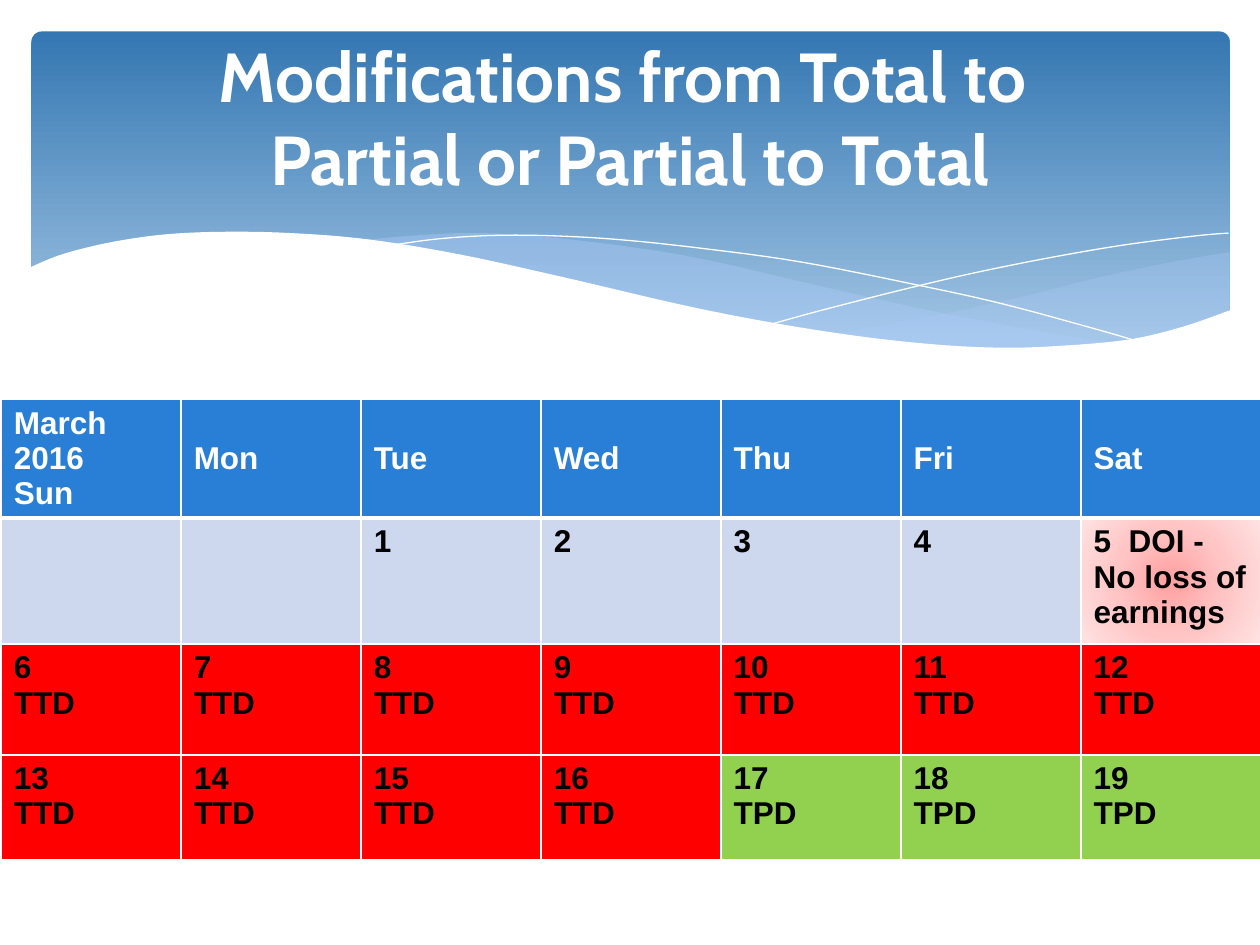
from lxml.etree import SubElement
from pptx import Presentation
from pptx.dml.color import RGBColor
from pptx.enum.shapes import MSO_SHAPE
from pptx.enum.text import MSO_ANCHOR, PP_ALIGN
from pptx.oxml import parse_xml
from pptx.oxml.ns import qn
from pptx.util import Pt

PX = 9144
DRAWING_NS = 'xmlns:a="http://schemas.openxmlformats.org/drawingml/2006/main"'
WHITE, BLACK, RED, GREEN = "FFFFFF", "000000", "FF0000", "92D050"
HEADER_BLUE, PALE_BLUE, SWELL_BLUE = "297FD5", "CDD8EF", "ACCBF9"
INJURY_GLOW = [(0, "FFA0A0"), (50, "FFC5C5"), (100, "FFE3E3")]

RIGHT_SWELL = [
    [(951, 175), (910, 182), (866, 191), (836, 198), (780, 212), (704, 228), (636, 240)],
    [(636, 240), (680, 246), (732, 251), (789, 253), (838, 250), (888, 242),
     (924, 232), (951, 222)],
]
LEFT_SWELL = [
    [(868, 248), (812, 240), (716, 222), (643, 206), (604, 197), (544, 183),
     (489, 173), (417, 164), (355, 160), (303, 162), (261, 166)],
    [(261, 166), (317, 174), (379, 186), (424, 197), (505, 215), (576, 230),
     (640, 241), (697, 249), (748, 252), (803, 253), (853, 251), (868, 248)],
]
FALLING_LINE = [(284, 170), (319, 165), (362, 162), (408, 162), (464, 165), (531, 172),
                (611, 183), (702, 201), (770, 216), (844, 236), (882, 247)]
RISING_LINE = [(588, 232), (628, 221), (695, 204), (751, 191), (811, 179), (870, 169),
               (926, 162), (950, 160)]
WHITE_WAVE = [
    [(952, 221), (915, 234), (874, 244), (825, 249), (768, 251), (701, 247), (623, 237),
     (530, 220), (422, 195), (340, 177), (267, 165), (205, 160), (152, 159), (107, 161),
     (70, 166), (42, 172), (21, 178), (4, 185), (-2, 188)],
    [(-2, 304), (952, 304)],
]


def color(hex_value):
    return RGBColor.from_string(hex_value)


def write(frame, text, size=18, font="Arial", ink=BLACK, bold=True, align=PP_ALIGN.LEFT):
    frame.word_wrap = True
    frame.text = text
    for paragraph in frame.paragraphs:
        paragraph.alignment = align
        for run in paragraph.runs:
            run.font.size = Pt(size)
            run.font.name = font
            run.font.bold = bold
            run.font.color.rgb = color(ink)


def smooth_curve(knots, steps=6):
    padded = [knots[0], *knots, knots[-1]]
    points = [knots[0]]
    for a, b, c, d in zip(padded, padded[1:], padded[2:], padded[3:]):
        for step in range(1, steps + 1):
            t = step / steps
            points.append(tuple(
                (2 * q + (r - p) * t + (2 * p - 5 * q + 4 * r - s) * t ** 2
                 + (3 * q - p - 3 * r + s) * t ** 3) / 2
                for p, q, r, s in zip(a, b, c, d)))
    return points


def add_wave(slide, left, top, edges, fill=None, opacity=100):
    points = [(round((left + x) * PX), round((top + y) * PX))
              for edge in edges for x, y in smooth_curve(edge)]
    builder = slide.shapes.build_freeform(*points[0], scale=1.0)
    builder.add_line_segments(points[1:], close=fill is not None)
    wave = builder.convert_to_shape()
    wave.shadow.inherit = False
    if fill is None:
        wave.fill.background()
        wave.line.color.rgb = color(WHITE)
        wave.line.width = Pt(0)
        return
    wave.line.fill.background()
    wave.fill.solid()
    wave.fill.fore_color.rgb = color(fill)
    if opacity < 100:
        tint = wave._element.spPr.find(qn("a:solidFill")).find(qn("a:srgbClr"))
        SubElement(tint, qn("a:alpha")).set("val", str(opacity * 1000))


def add_banner(slide, left, top, width, height):
    panel = slide.shapes.add_shape(
        MSO_SHAPE.ROUNDED_RECTANGLE, left * PX, top * PX, width * PX, height * PX)
    panel.adjustments[0] = 0.03
    panel.shadow.inherit = False
    panel.line.fill.background()
    panel.fill.gradient()
    panel.fill.gradient_angle = 270
    for stop, position, shade in zip(panel.fill.gradient_stops, (0, 0.9), ("3477B2", "A1C4E3")):
        stop.position = position
        stop.color.rgb = color(shade)
    add_wave(slide, left, top, RIGHT_SWELL, SWELL_BLUE, 29)
    add_wave(slide, left, top, LEFT_SWELL, SWELL_BLUE, 40)
    add_wave(slide, left, top, [FALLING_LINE])
    add_wave(slide, left, top, [RISING_LINE])
    add_wave(slide, left, top, WHITE_WAVE, WHITE)


def add_title(slide, left, top, width, height):
    title = slide.shapes.add_textbox(left * PX, top * PX, width * PX, height * PX)
    title.text_frame.vertical_anchor = MSO_ANCHOR.MIDDLE
    write(title.text_frame, "Modifications from Total to \vPartial or Partial to Total",
          size=39.6, font="Cabin", ink=WHITE, align=PP_ALIGN.CENTER)


def fill_cell(cell, fill):
    if isinstance(fill, str):
        cell.fill.solid()
        cell.fill.fore_color.rgb = color(fill)
        return
    stops = "".join(f'<a:gs pos="{position * 1000}"><a:srgbClr val="{shade}"/></a:gs>'
                    for position, shade in fill)
    cell._tc.get_or_add_tcPr().append(parse_xml(
        f'<a:gradFill {DRAWING_NS} rotWithShape="1"><a:gsLst>{stops}</a:gsLst>'
        '<a:path path="circle"><a:fillToRect l="50000" t="50000" r="50000" b="50000"/>'
        '</a:path></a:gradFill>'))


def border_cell(cell, top=1, bottom=1):
    sides = {"lnL": 1, "lnR": 1, "lnT": top, "lnB": bottom}
    for order, (side, points) in enumerate(sides.items()):
        cell._tc.get_or_add_tcPr().insert(order, parse_xml(
            f'<a:{side} {DRAWING_NS} w="{Pt(points)}"><a:solidFill>'
            f'<a:srgbClr val="{WHITE}"/></a:solidFill></a:{side}>'))


def calendar_weeks():
    header = [(day, HEADER_BLUE) for day in
              ("March 2016\nSun", "Mon", "Tue", "Wed", "Thu", "Fri", "Sat")]
    first_week = [(day, PALE_BLUE) for day in ("", "", "1", "2", "3", "4")]
    first_week.append(("5  DOI -\nNo loss of earnings", INJURY_GLOW))
    disability = [(f"{day}\nTTD", RED) if day < 17 else (f"{day}\nTPD", GREEN)
                  for day in range(6, 20)]
    return [header, first_week, disability[:7], disability[7:]]


def add_calendar(slide, left, top, width, row_heights):
    weeks = calendar_weeks()
    calendar = slide.shapes.add_table(
        len(weeks), 7, left * PX, top * PX, width * PX, sum(row_heights) * PX).table
    calendar.horz_banding = False
    for column in calendar.columns:
        column.width = round(width * PX / 7)
    for index, (week, height) in enumerate(zip(weeks, row_heights)):
        calendar.rows[index].height = height * PX
        for cell, (text, fill) in zip(calendar.rows[index].cells, week):
            fill_cell(cell, fill)
            border_cell(cell, top=3 if index == 1 else 1, bottom=3 if index == 0 else 1)
            cell.vertical_anchor = MSO_ANCHOR.MIDDLE if index == 0 else MSO_ANCHOR.TOP
            write(cell.text_frame, text, ink=WHITE if index == 0 else BLACK)


def main():
    deck = Presentation()
    deck.slide_width, deck.slide_height = 1000 * PX, 750 * PX
    slide = deck.slides.add_slide(deck.slide_layouts[6])
    add_banner(slide, 25, 25, 951, 270)
    add_calendar(slide, 1, 317, 1000, [70, 100, 88, 83])
    add_title(slide, 0, 30, 1000, 125)
    deck.save("out.pptx")


if __name__ == "__main__":
    main()
